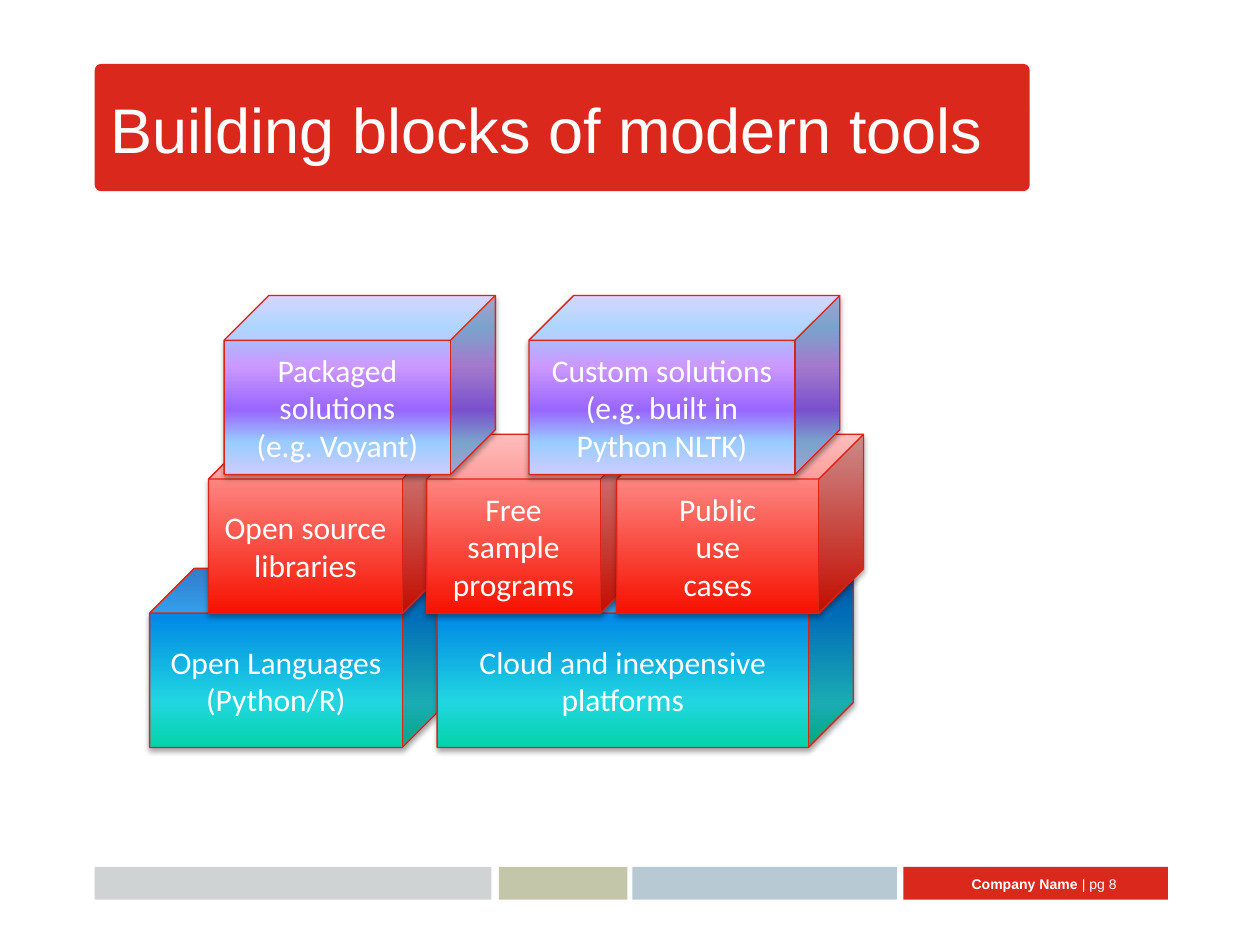
from lxml import etree
from pptx import Presentation
from pptx.dml.color import RGBColor
from pptx.enum.shapes import MSO_SHAPE
from pptx.enum.text import MSO_ANCHOR, PP_ALIGN
from pptx.oxml.ns import qn
from pptx.util import Pt

ROUND, CUBE = MSO_SHAPE.ROUNDED_RECTANGLE, MSO_SHAPE.CUBE
MIDDLE = MSO_ANCHOR.MIDDLE
LEFT, CENTER, RIGHT = PP_ALIGN.LEFT, PP_ALIGN.CENTER, PP_ALIGN.RIGHT

WHITE = RGBColor(0xFF, 0xFF, 0xFF)
RED = RGBColor(0xDA, 0x29, 0x1C)
EDGE_RED = RGBColor(0xDA, 0x24, 0x17)
GREY = RGBColor(0xD0, 0xD3, 0xD4)
OLIVE = RGBColor(0xC3, 0xC6, 0xA8)
STEEL = RGBColor(0xB7, 0xC9, 0xD3)

OCEAN = [(0, "03D4A8"), (25, "21D6E0"), (75, "0087E6"), (100, "005CBF")]
FIRE = [(0, "F61100"), (100, "FFADAC")]
VIOLET = [(0, "CCCCFF"), (18, "99CCFF"), (36, "9966FF"),
          (61, "CC99FF"), (82, "99CCFF"), (100, "CCCCFF")]

TITLE = "Building blocks of modern tools"
FOOTER = [("Company Name ", True), ("| pg 8", False)]
FOOTER_BARS = [(516.2, 151.2, RED), (54, 226.8, GREY),
               (285.1, 73.4, OLIVE), (361.4, 151.2, STEEL)]
BAR_TOP, BAR_HEIGHT = 495.4, 18.7

BLOCK_HEIGHT = 102.3
BLOCK_ROWS = [
    (324.8, OCEAN, [
        (85.5, 170, ["Open Languages (Python/R)"]),
        (249.8, 237.8, ["Cloud and inexpensive platforms"]),
    ]),
    (248.2, FIRE, [
        (119.2, 136.4, ["Open source libraries"]),
        (243.8, 124.9, ["Free sample programs"]),
        (352.5, 141, ["Public", "use", "cases"]),
    ]),
    (168.8, VIOLET, [
        (302.3, 177.6, ["Custom solutions (e.g. built in Python NLTK)"]),
        (128.1, 155, ["Packaged solutions", "(e.g. Voyant)"]),
    ]),
]


def style_paragraph(para, name, size, align):
    para.alignment = align
    para.font.name = name
    para.font.size = Pt(size)
    para.font.color.rgb = WHITE


def add_bar(page, left, top, width, height, color, rounding=0):
    bar = page.shapes.add_shape(ROUND, Pt(left), Pt(top), Pt(width), Pt(height))
    bar.adjustments[0] = rounding
    bar.shadow.inherit = False
    bar.fill.solid()
    bar.fill.fore_color.rgb = color
    bar.line.fill.background()
    return bar


def add_text(page, left, top, width, height, spans, size, align):
    box = page.shapes.add_textbox(Pt(left), Pt(top), Pt(width), Pt(height))
    frame = box.text_frame
    frame.word_wrap = True
    frame.vertical_anchor = MIDDLE
    para = frame.paragraphs[0]
    for text, bold in spans:
        span = para.add_run()
        span.text = text
        span.font.bold = bold
    style_paragraph(para, "Arial", size, align)


def add_color(parent, value):
    color = etree.SubElement(parent, qn("a:srgbClr"))
    color.set("val", value)
    return color


def set_gradient(shape, stops):
    shape.fill.gradient()
    shape.fill.gradient_angle = 90
    stop_list = shape.element.spPr.find(qn("a:gradFill")).find(qn("a:gsLst"))
    for old_stop in list(stop_list):
        stop_list.remove(old_stop)
    for position, value in stops:
        stop = etree.SubElement(stop_list, qn("a:gs"))
        stop.set("pos", str(position * 1000))
        add_color(stop, value)


def set_shadow(shape):
    shape.shadow.inherit = False
    effects = shape.element.spPr.find(qn("a:effectLst"))
    shadow = etree.SubElement(effects, qn("a:outerShdw"))
    for key, value in (("blurRad", Pt(3.1)), ("dist", Pt(1.8)),
                       ("dir", 90 * 60000), ("rotWithShape", 0)):
        shadow.set(key, str(int(value)))
    alpha = etree.SubElement(add_color(shadow, "000000"), qn("a:alpha"))
    alpha.set("val", "35000")


def add_block(page, left, top, width, stops, lines):
    block = page.shapes.add_shape(CUBE, Pt(left), Pt(top), Pt(width), Pt(BLOCK_HEIGHT))
    set_gradient(block, stops)
    block.line.color.rgb = EDGE_RED
    block.line.width = Pt(0.75)
    set_shadow(block)
    frame = block.text_frame
    frame.word_wrap = True
    frame.vertical_anchor = MIDDLE
    frame.text = "\n".join(lines)
    for para in frame.paragraphs:
        style_paragraph(para, "Calibri", 18, CENTER)


def main():
    deck = Presentation()
    deck.slide_width, deck.slide_height = Pt(720), Pt(540)
    page = deck.slides.add_slide(deck.slide_layouts[6])

    for left, width, color in FOOTER_BARS:
        add_bar(page, left, BAR_TOP, width, BAR_HEIGHT, color)
    add_text(page, 477.4, 491, 167.8, 28.8, FOOTER, 8, RIGHT)

    banner = add_bar(page, 54.5, 36.9, 533.5, 72, RED, 0.045)
    banner.line.color.rgb = RED
    banner.line.width = Pt(0.75)
    add_text(page, 56.2, 36.7, 531.4, 72.7, [(TITLE, False)], 36, LEFT)

    for top, stops, blocks in BLOCK_ROWS:
        for left, width, lines in blocks:
            add_block(page, left, top, width, stops, lines)

    deck.save("out.pptx")


if __name__ == "__main__":
    main()
